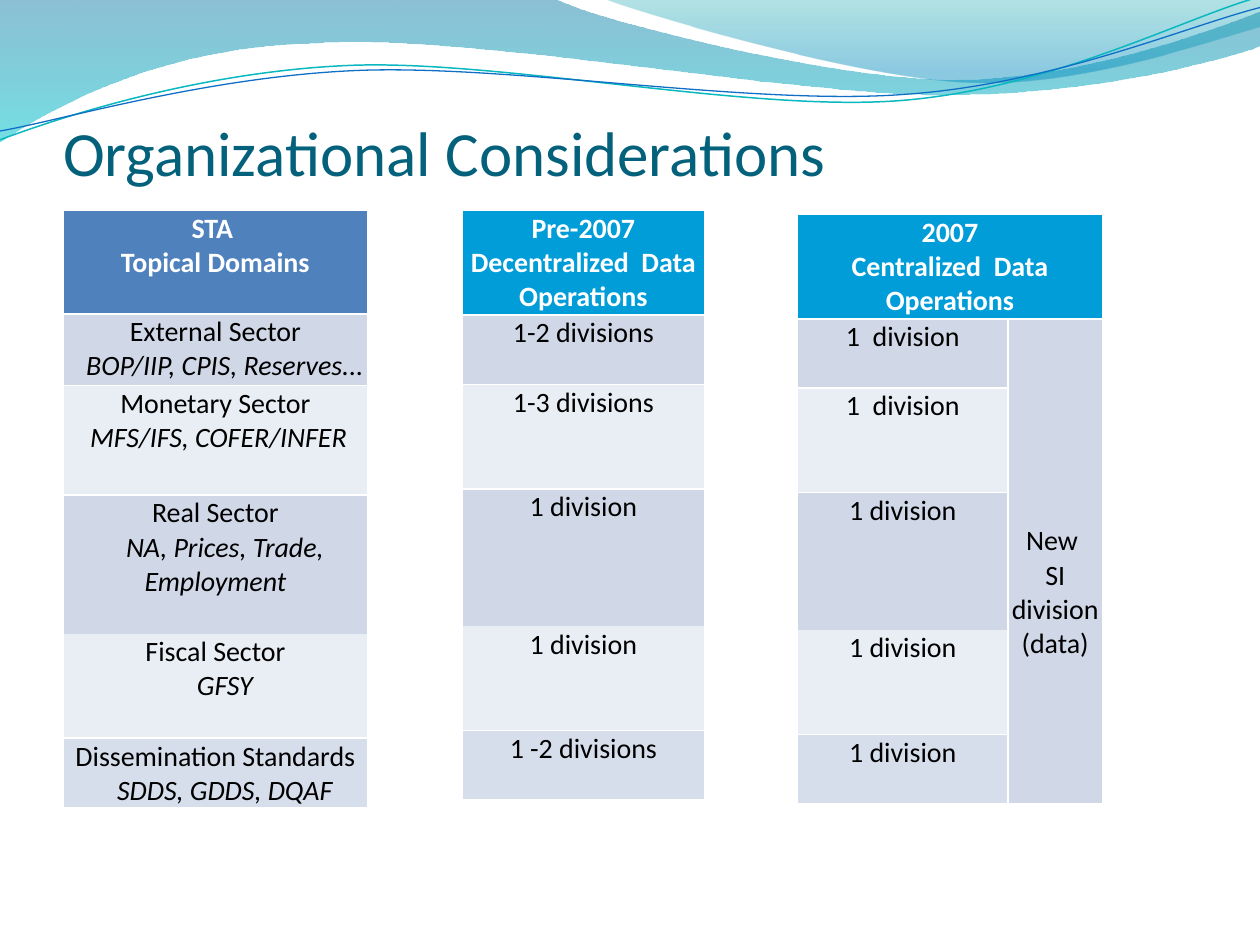
from lxml import etree
from pptx import Presentation
from pptx import util as u
from pptx.dml.color import RGBColor
from pptx.enum import text
from pptx.oxml import ns

FONT = "Calibri"
TITLE = "Organizational Considerations"

# Waves: start point, then lines (2 numbers) and Bezier curves (6 numbers)
BANDS = [
    dict(start=(0, 0), stops=[(0, "0074A1", 45), (1, "00C6CF", 55)],
         steps=[(4.4, -0.01), (4.76, 0.17, 6.64, 0.63, 7.58, 0.63),
                (8.53, 0.63, 9.58, 0.26, 10, 0.09), (10.01, 0.36),
                (9.83, 0.44, 8.7, 0.76, 7.46, 0.75),
                (6.22, 0.75, 3.82, 0.28, 2.57, 0.34),
                (1.29, 0.36, 0.46, 0.83, -0.01, 1.13)]),
    dict(start=(4.79, -0.01), stops=[(0, "00A1A9", 30), (0.8, "008BBF", 45)],
         steps=[(5.09, 0.11, 6.82, 0.62, 7.69, 0.65),
                (8.56, 0.69, 9.61, 0.32, 10, 0.21), (10, 0)]),
]
STRANDS = [
    dict(start=(0, 1.11), line=("0AB8BF", 0.85),
         steps=[(0.48, 0.93, 1.58, 0.57, 2.77, 0.52),
                (3.95, 0.47, 5.93, 0.89, 7.13, 0.8),
                (8.33, 0.71, 9.38, 0.15, 9.98, -0.02)]),
    dict(start=(0, 1.04), line=("0F6FC6", 0.75),
         steps=[(0.47, 0.96, 1.64, 0.61, 2.83, 0.56),
                (4.03, 0.51, 5.97, 0.84, 7.17, 0.75),
                (8.36, 0.67, 9.41, 0.21, 10, 0.06)]),
]

# Tables: each row is a list of lines; the second line of a sector is italic
DIVISION_ROWS = [0.83, 0.55, 0.83, 1.09, 0.83, 0.55]
TABLES = [
    dict(at=(0.5, 1.67), columns=[2.42], heading="4F81BD",
         heights=[0.82, 0.57, 0.87, 1.1, 0.83, 0.55],
         rows=[["STA ", "Topical Domains"],
               ["External Sector", "BOP/IIP, CPIS, Reserves..."],
               ["Monetary Sector", "MFS/IFS, COFER/INFER"],
               ["Real Sector", "NA, Prices, Trade, Employment"],
               ["Fiscal Sector", "GFSY"],
               ["Dissemination Standards", "SDDS, GDDS, DQAF"]]),
    dict(at=(3.67, 1.67), columns=[1.92], heading="009DD9", heights=DIVISION_ROWS,
         rows=[["Pre-2007", "Decentralized  Data Operations"], ["1-2 divisions"],
               ["1-3 divisions"], ["1 division"], ["1 division"], ["1 -2 divisions"]]),
    dict(at=(6.33, 1.7), columns=[1.67, 0.75], heading="009DD9", heights=DIVISION_ROWS,
         rows=[["2007", "Centralized  Data Operations"], ["1  division"], ["1  division"],
               ["1 division"], ["1 division"], ["1 division"]],
         side=["New ", "SI", "division", "(data)"]),
]
BODY_FILLS = ["D0D8E8", "E9EDF4"]
LAST_ROW_ALPHA = 84
SIDE_TOP = 1.63
INDENTS = {"MFS/IFS, COFER/INFER": 0.05}
ITALIC_INDENT = 0.15
OPEN_EDGE = 4  # no border between the rows above and below this edge


def paint(color, value):
    color.rgb = RGBColor.from_string(value)


def set_alpha(element, alpha):
    etree.SubElement(element, ns.qn("a:alpha")).set("val", str(alpha * 1000))


def bend(shape, steps):
    """Join each three segments that belong to a curve into one Bezier."""
    segments = iter(list(shape.element.iter(ns.qn("a:lnTo"))))
    for step in steps:
        first = next(segments)
        if len(step) == 2:
            continue
        curve = etree.Element(ns.qn("a:cubicBezTo"))
        first.addprevious(curve)
        for segment in (first, next(segments), next(segments)):
            curve.append(segment[0])
            segment.getparent().remove(segment)


def draw_wave(slide, start, steps, stops=None, line=None):
    points = [start] + [step[i:i + 2] for step in steps for i in range(0, len(step), 2)]
    points = [(u.Inches(x), u.Inches(y)) for x, y in points]
    builder = slide.shapes.build_freeform(*points[0])
    builder.add_line_segments(points[1:], close=stops is not None)
    shape = builder.convert_to_shape()
    bend(shape, steps)
    shape.shadow.inherit = False
    if stops:
        shape.line.fill.background()
        shape.fill.gradient()
        shape.fill.gradient_angle = 270
        for stop, (position, color, _) in zip(shape.fill.gradient_stops, stops):
            stop.position = position
            paint(stop.color, color)
        colors = list(shape.element.iter(ns.qn("a:srgbClr")))
        for element, (_, _, alpha) in zip(colors, stops):
            set_alpha(element, alpha)
    else:
        shape.fill.background()
        paint(shape.line.color, line[0])
        shape.line.width = u.Pt(line[1])


def set_borders(cell, row):
    """White borders, thicker under the heading; width 0 means none."""
    edge_width = {1: 1.5, OPEN_EDGE: 0}
    widths = [("L", 1), ("R", 1), ("T", edge_width.get(row, 1)),
              ("B", edge_width.get(row + 1, 1))]
    properties = cell._tc.get_or_add_tcPr()
    for index, (side, width) in enumerate(widths):
        border = etree.Element(ns.qn(f"a:ln{side}"), w=str(u.Pt(width)))
        if width:
            fill = etree.SubElement(border, ns.qn("a:solidFill"))
            etree.SubElement(fill, ns.qn("a:srgbClr")).set("val", "FFFFFF")
        else:
            etree.SubElement(border, ns.qn("a:noFill"))
        properties.insert(index, border)


def fill_cell(cell, row, lines, color, alpha=None, italic_second=False, top=0.01):
    cell.margin_left = cell.margin_right = u.Inches(0.01)
    cell.margin_top, cell.margin_bottom = u.Inches(top), 0
    cell.fill.solid()
    paint(cell.fill.fore_color, color)
    if alpha:
        set_alpha(next(cell._tc.tcPr.iter(ns.qn("a:srgbClr"))), alpha)
    set_borders(cell, row)
    frame = cell.text_frame
    frame.text = "\n".join(lines)
    for index, paragraph in enumerate(frame.paragraphs):
        paragraph.alignment = text.PP_ALIGN.CENTER
        font = paragraph.font
        font.name, font.size, font.bold = FONT, u.Pt(16), row == 0
        paint(font.color, "000000" if row else "FFFFFF")
        if italic_second and index == 1:
            font.italic = True
            indent = INDENTS.get(lines[1], ITALIC_INDENT)
            paragraph._p.get_or_add_pPr().set("indent", str(u.Inches(indent)))


def add_domain_table(slide, at, columns, heading, heights, rows, side=None):
    size = (sum(columns), sum(heights))
    frame = slide.shapes.add_table(len(rows), len(columns),
                                   *[u.Inches(value) for value in at + size])
    table = frame.table
    table.first_row = table.horz_banding = False
    for column, width in zip(table.columns, columns):
        column.width = u.Inches(width)
    for table_row, height in zip(table.rows, heights):
        table_row.height = u.Inches(height)
    if side:
        table.cell(0, 0).merge(table.cell(0, 1))
        table.cell(1, 1).merge(table.cell(len(rows) - 1, 1))
        fill_cell(table.cell(1, 1), 1, side, BODY_FILLS[0], top=SIDE_TOP)
    for row, lines in enumerate(rows):
        color = BODY_FILLS[(row - 1) % 2] if row else heading
        alpha = LAST_ROW_ALPHA if row == len(rows) - 1 else None
        fill_cell(table.cell(row, 0), row, lines, color, alpha, italic_second=row > 0)


def main():
    presentation = Presentation()
    presentation.slide_width, presentation.slide_height = u.Inches(10), u.Inches(7.5)
    slide = presentation.slides.add_slide(presentation.slide_layouts[5])

    # Waves across the top
    for wave in BANDS + STRANDS:
        draw_wave(slide, **wave)

    # Title, in front of the waves
    title = slide.shapes.title
    title.element.getparent().append(title.element)
    title.left, title.top, title.width, title.height = map(u.Inches, (0.5, 0.25, 9, 1.25))
    frame = title.text_frame
    frame.text = TITLE
    frame.auto_size = text.MSO_AUTO_SIZE.NONE
    frame.vertical_anchor = text.MSO_ANCHOR.BOTTOM
    frame.margin_left = frame.margin_right = frame.margin_bottom = 0
    paragraph = frame.paragraphs[0]
    paragraph.alignment = text.PP_ALIGN.LEFT
    paragraph.font.name, paragraph.font.size = FONT, u.Pt(36)
    paint(paragraph.font.color, "04617B")

    # Domains and the divisions before and after centralization
    for table in TABLES:
        add_domain_table(slide, **table)

    presentation.save("out.pptx")


if __name__ == "__main__":
    main()
